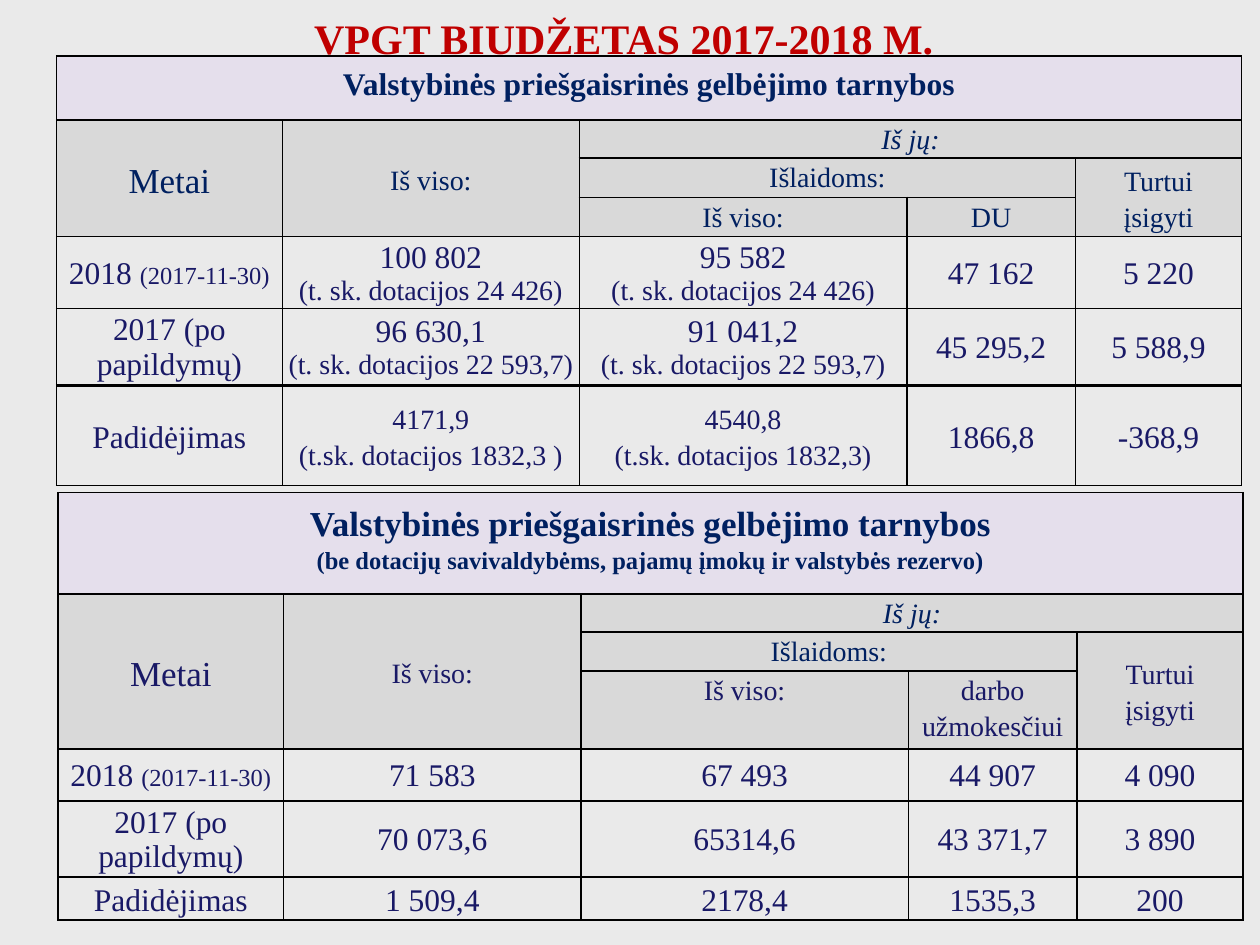
from lxml import etree
from pptx import Presentation
from pptx.dml.color import RGBColor
from pptx.enum.text import MSO_ANCHOR, PP_ALIGN
from pptx.oxml.ns import qn
from pptx.util import Cm, Pt

CENTER = PP_ALIGN.CENTER
TOP, MIDDLE = MSO_ANCHOR.TOP, MSO_ANCHOR.MIDDLE

THEME = {
    "font": "Times New Roman",
    "background": "EAEAEA", "heading": "C00000", "navy": "002060", "ink": "191966",
    "banner": "E5DFEC", "header": "D9D9D9", "border": "000000",
    "heading_size": 24, "large": 20, "figure": 18, "label": 16, "note": 14,
    "thin": 1, "thick": 1.5, "spacing": 1.15,
}
LARGE, FIGURE, LABEL, NOTE = (THEME[size] for size in ("large", "figure", "label", "note"))

HEADING = "VPGT BIUDŽETAS 2017-2018 M."
SERVICE = "Valstybinės priešgaisrinės gelbėjimo tarnybos"
YEAR_2018 = [[("2018 ", FIGURE), ("(2017-11-30)", NOTE)]]
YEAR_2017 = "2017 (po papildymų)"
INCREASE = "Padidėjimas"
COLUMN_WIDTHS = [4.55, 5.99, 6.6, 3.4, 3.35]


def with_grant(amount, grant, size=FIGURE):
    return [[(amount, size)], [(grant, LABEL)]]


BUDGETS = [
    {
        "left": 1.14, "top": 1.13,
        "row_heights": [1.29, 0.77, 0.79, 0.79, 1.45, 1.55, 2.02],
        "banner": [[(SERVICE, FIGURE)]],
        "pay": "DU",
        "header_color": "navy",
        "years": [
            [YEAR_2018,
             with_grant("100 802", "(t. sk. dotacijos 24 426)"),
             with_grant("95 582", "(t. sk. dotacijos 24 426)"),
             "47 162", "5 220"],
            [YEAR_2017,
             with_grant("96 630,1", "(t. sk. dotacijos 22 593,7)"),
             with_grant("91 041,2", "(t. sk. dotacijos 22 593,7)"),
             "45 295,2", "5 588,9"],
            [INCREASE,
             with_grant("4171,9", "(t.sk. dotacijos 1832,3 )", LABEL),
             with_grant("4540,8", "(t.sk. dotacijos 1832,3)", LABEL),
             "1866,8", "-368,9"],
        ],
    },
    {
        "left": 1.17, "top": 9.93,
        "row_heights": [2.04, 0.77, 0.79, 1.57, 1.05, 1.53, 0.87],
        "banner": [[(SERVICE, LARGE)],
                   [("(be dotacijų savivaldybėms, pajamų įmokų ir valstybės rezervo)", NOTE)]],
        "pay": "darbo užmokesčiui",
        "header_color": "ink",
        "years": [
            [YEAR_2018, "71 583", "67 493", "44 907", "4 090"],
            [YEAR_2017, "70 073,6", "65314,6", "43 371,7", "3 890"],
            [INCREASE, "1 509,4", "2178,4", "1535,3", "200"],
        ],
    },
]


def style_run(run, size, color, bold=False, italic=False):
    run.font.name = THEME["font"]
    run.font.size = Pt(size)
    run.font.bold = bold
    run.font.italic = italic
    run.font.color.rgb = RGBColor.from_string(THEME[color])


def write_cell(cell, lines, color, spacing=None, anchor=MIDDLE, bold=False, italic=False):
    if isinstance(lines, str):
        lines = [[(lines, FIGURE)]]
    cell.vertical_anchor = anchor
    for index, line in enumerate(lines):
        paragraph = cell.text_frame.paragraphs[0] if index == 0 else cell.text_frame.add_paragraph()
        paragraph.alignment = CENTER
        if spacing:
            paragraph.line_spacing = spacing
        for words, size in line:
            run = paragraph.add_run()
            run.text = words
            style_run(run, size, color, bold, italic)


def set_margins(cell, side, top=0, bottom=0):
    cell.margin_left = cell.margin_right = Cm(side)
    cell.margin_top, cell.margin_bottom = Cm(top), Cm(bottom)


def set_borders(cell, widths):
    properties = cell._tc.get_or_add_tcPr()
    for edge in "LRTB":
        width = widths.get(edge, THEME["thin"])
        line = etree.SubElement(properties, qn(f"a:ln{edge}"), w=str(Pt(width)))
        fill = etree.SubElement(line, qn("a:solidFill"))
        etree.SubElement(fill, qn("a:srgbClr"), val=THEME["border"])


def header_cells(budget):
    color = budget["header_color"]
    return [
        (1, 0, 3, 1, [[("Metai", LARGE)]], color, MIDDLE, False),
        (1, 1, 3, 1, [[("Iš viso:", LABEL)]], color, MIDDLE, False),
        (1, 2, 1, 3, [[("Iš jų:", LABEL)]], "navy", TOP, True),
        (2, 2, 1, 2, [[("Išlaidoms:", LABEL)]], "navy", TOP, False),
        (2, 4, 2, 1, [[("Turtui", LABEL)], [("įsigyti", LABEL)]], color, MIDDLE, False),
        (3, 2, 1, 1, [[("Iš viso:", LABEL)]], color, TOP, False),
        (3, 3, 1, 1, [[(budget["pay"], LABEL)]], color, TOP, False),
    ]


def add_budget(slide, budget):
    heights = budget["row_heights"]
    table = slide.shapes.add_table(
        len(heights), len(COLUMN_WIDTHS), Cm(budget["left"]), Cm(budget["top"]),
        Cm(sum(COLUMN_WIDTHS)), Cm(sum(heights))).table
    table.first_row = table.horz_banding = False
    for column, width in zip(table.columns, COLUMN_WIDTHS):
        column.width = Cm(width)

    thick_edges = {5: {"B": THEME["thick"]}, 6: {"T": THEME["thick"]}}
    for index, (row, height) in enumerate(zip(table.rows, heights)):
        row.height = Cm(height)
        for cell in row.cells:
            set_borders(cell, thick_edges.get(index, {}))
            set_margins(cell, 0.18)
            if index < 4:
                cell.fill.solid()
                shade = "banner" if index == 0 else "header"
                cell.fill.fore_color.rgb = RGBColor.from_string(THEME[shade])
            else:
                cell.fill.background()

    banner = table.cell(0, 0)
    banner.merge(table.cell(0, len(COLUMN_WIDTHS) - 1))
    set_margins(banner, 0.18, bottom=0.24)
    write_cell(banner, budget["banner"], "navy", THEME["spacing"], bold=True)

    for row, column, down, across, lines, color, anchor, italic in header_cells(budget):
        cell = table.cell(row, column)
        if down * across > 1:
            cell.merge(table.cell(row + down - 1, column + across - 1))
        write_cell(cell, lines, color, THEME["spacing"], anchor, italic=italic)

    for row, amounts in enumerate(budget["years"], start=4):
        is_increase = amounts[0] == INCREASE
        for column, amount in enumerate(amounts):
            cell = table.cell(row, column)
            if not is_increase:
                set_margins(cell, 0.03, top=0.03)
            write_cell(cell, amount, "ink", THEME["spacing"] if is_increase else None)


def add_heading(slide):
    frame = slide.shapes.add_textbox(Cm(1.07), Cm(0.13), Cm(23.01), Cm(1.28)).text_frame
    frame.word_wrap = True
    frame.text = HEADING
    frame.paragraphs[0].alignment = CENTER
    style_run(frame.paragraphs[0].runs[0], THEME["heading_size"], "heading", bold=True)


def main():
    presentation = Presentation()
    presentation.slide_width, presentation.slide_height = Cm(25.4), Cm(19.05)
    slide = presentation.slides.add_slide(presentation.slide_layouts[6])
    slide.background.fill.solid()
    slide.background.fill.fore_color.rgb = RGBColor.from_string(THEME["background"])
    for budget in BUDGETS:
        add_budget(slide, budget)
    add_heading(slide)
    presentation.save("out.pptx")


if __name__ == "__main__":
    main()
